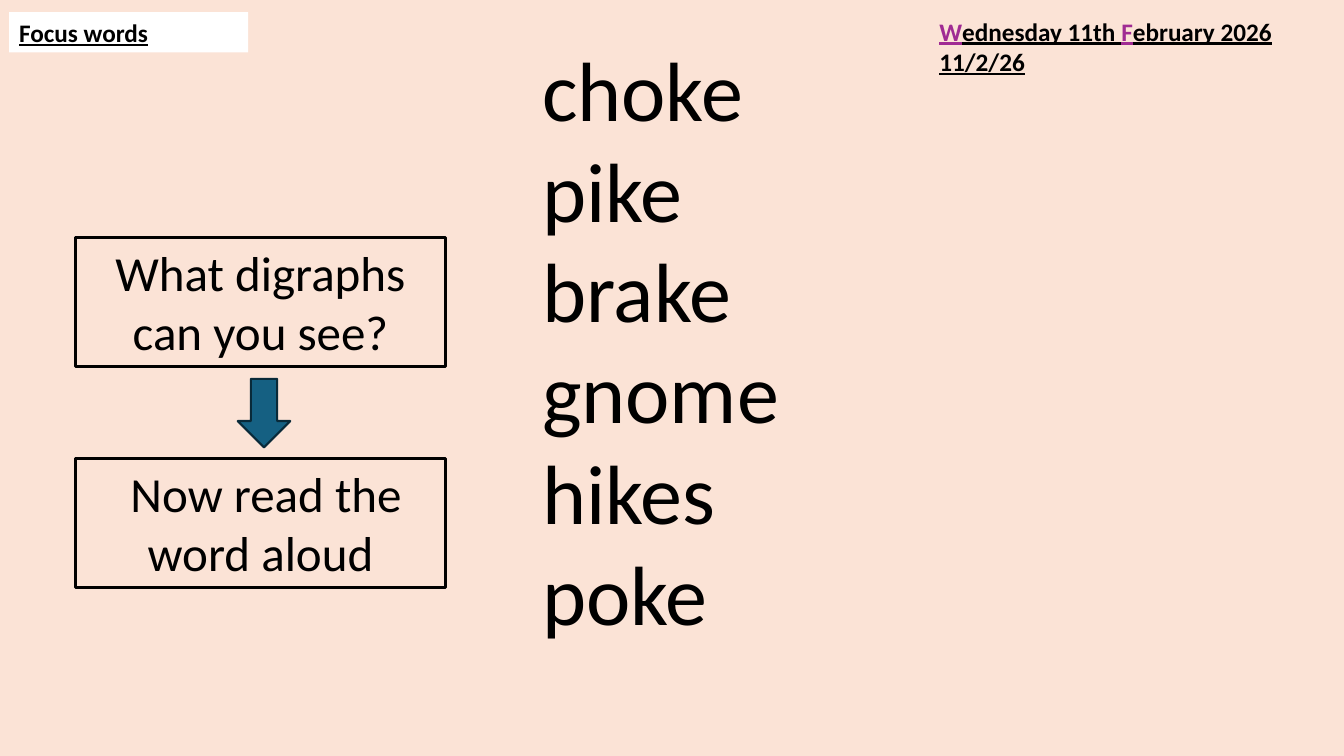
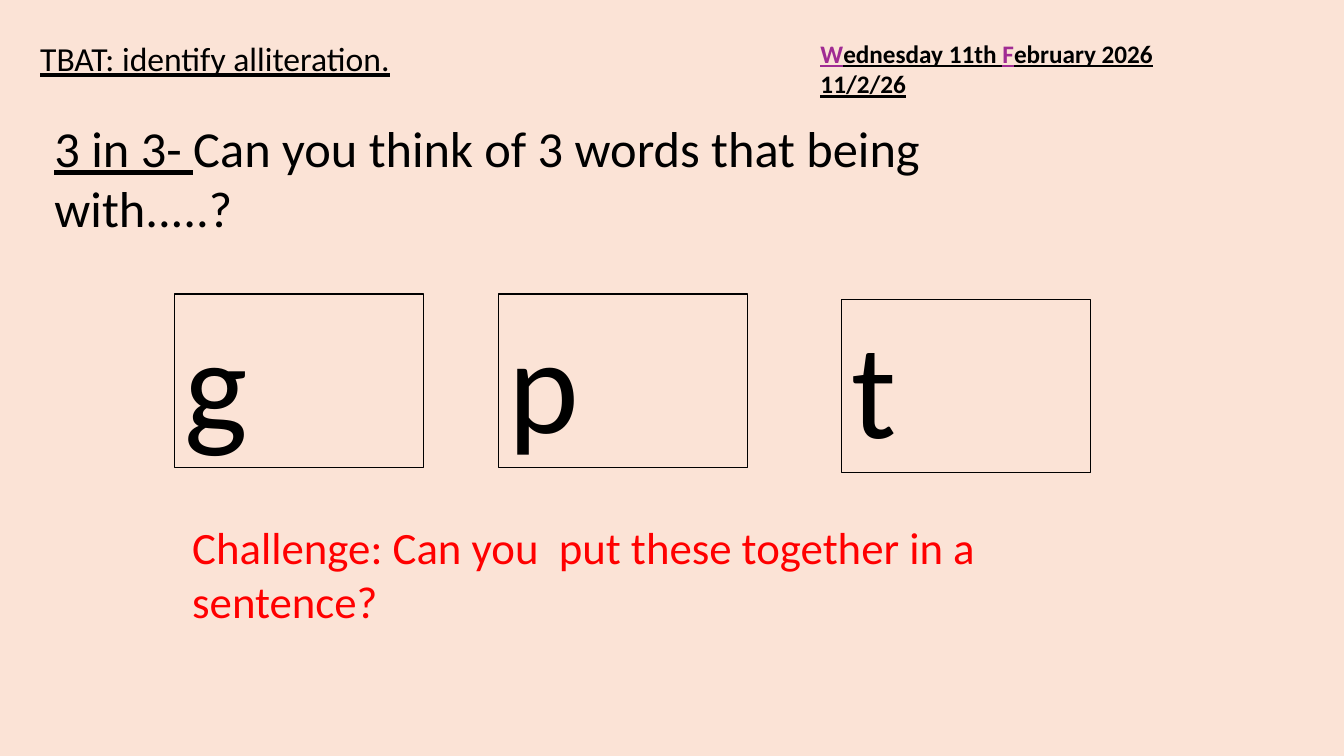
from pptx import Presentation
from pptx.dml.color import RGBColor
from pptx.enum.shapes import MSO_SHAPE as Preset
from pptx.enum.text import MSO_ANCHOR as Anchor, PP_ALIGN as Align
from pptx.util import Inches, Pt

# Shared style
FONT = "Calibri"
PEACH, WHITE, BLACK = "FBE3D6", "FFFFFF", "000000"
PURPLE, RED = "A02B93", "FF0000"
ARROW_FILL, ARROW_LINE = "156082", "092A39"
COLUMNS, ROWS = 32, 18


def colour(value):
    return RGBColor.from_string(value)


class Deck:
    """Holds the style and the current slide; lengths are grid columns and rows."""

    def __init__(self):
        self.presentation = Presentation()
        self.presentation.slide_width = Inches(13.33)
        self.presentation.slide_height = Inches(7.5)
        self.column = self.presentation.slide_width / COLUMNS
        self.row = self.presentation.slide_height / ROWS
        background = self.presentation.slide_master.background.fill
        background.solid()
        background.fore_color.rgb = colour(PEACH)
        self.slide = None

    def add_slide(self):
        layout = self.presentation.slide_layouts[6]
        self.slide = self.presentation.slides.add_slide(layout)

    def place(self, left, top, width, height):
        return (round(left * self.column), round(top * self.row),
                round(width * self.column), round(height * self.row))

    def fill_text(self, shape, paragraphs, size, ink=BLACK, bold=False,
                  underline=False, align=Align.LEFT):
        """Each paragraph is a string or a list of (text, run font settings)."""
        frame = shape.text_frame
        frame.word_wrap = True
        frame.vertical_anchor = Anchor.TOP
        for index, content in enumerate(paragraphs):
            paragraph = frame.add_paragraph() if index else frame.paragraphs[0]
            paragraph.alignment = align
            font = paragraph.font
            font.name, font.size, font.bold = FONT, Pt(size), bold
            font.underline = underline
            font.color.rgb = colour(ink)
            runs = [(content, {})] if isinstance(content, str) else content
            for text, settings in runs:
                run = paragraph.add_run()
                run.text = text
                if "ink" in settings:
                    run.font.color.rgb = colour(settings["ink"])
                if "underline" in settings:
                    run.font.underline = settings["underline"]

    def text(self, area, paragraphs, size, **style):
        box = self.slide.shapes.add_textbox(*self.place(*area))
        self.fill_text(box, paragraphs, size, **style)

    def shape(self, preset, area, fill=None, line=None, weight=0.75):
        shape = self.slide.shapes.add_shape(preset, *self.place(*area))
        shape.shadow.inherit = False
        for target, value in ((shape.fill, fill), (shape.line.fill, line)):
            if value:
                target.solid()
                target.fore_color.rgb = colour(value)
            else:
                target.background()
        if line:
            shape.line.width = Pt(weight)
        return shape

    def box(self, area, text, size, fill=None, line=BLACK, weight=0.75, **style):
        shape = self.shape(Preset.RECTANGLE, area, fill, line, weight)
        self.fill_text(shape, [text], size, **style)

    def date(self, left, top, width):
        long_date = [("W", {"ink": PURPLE}), ("ednesday 11th ", {}),
                     ("F", {"ink": PURPLE}), ("ebruary 2026", {})]
        self.text((left, top, width, 1.7), [long_date, "11/2/26"], 18,
                  bold=True, underline=True)


def focus_words(deck):
    deck.add_slide()
    deck.box((0.22, 0.29, 5.69, 0.96), "Focus words", 18, fill=WHITE,
             line=None, bold=True, underline=True)
    deck.text((12.67, 0.77, 18, 14.9),
              ["choke", "pike", "brake", "gnome", "hikes", "poke"], 60)

    # Two steps with an arrow between them
    steps = ["What digraphs can you see?", " Now read the word aloud"]
    for index, step in enumerate(steps):
        deck.box((1.8, 5.66 + 5.26 * index, 8.81, 3.07), step, 35,
                 weight=2.25, align=Align.CENTER)
    deck.shape(Preset.DOWN_ARROW, (5.66, 9.02, 1.25, 1.63),
               ARROW_FILL, ARROW_LINE, 1.5)
    deck.date(22.13, 0.26, 9.8)


def alliteration(deck):
    deck.add_slide()
    deck.date(19.3, 0.79, 11.54)
    deck.text((0.72, 0.79, 11.54, 1.2), ["TBAT: identify alliteration."], 24,
              underline=True)
    deck.text((1.06, 2.66, 24.19, 3.14),
              [[("3 in 3- ", {"underline": True}),
                ("Can you think of 3 words that being with.....?", {})]], 36)

    # Starting letters
    for letter, left, top in (("g", 4.15, 7), ("p", 11.88, 7), ("t", 20.04, 7.13)):
        deck.box((left, top, 5.93, 4.13), letter, 96)

    deck.text((4.34, 12.26, 21.96, 2.83),
              ["Challenge: Can you  put these together in a sentence?"], 32, ink=RED)


def main():
    deck = Deck()
    focus_words(deck)
    alliteration(deck)
    deck.presentation.save("out.pptx")


if __name__ == "__main__":
    main()
